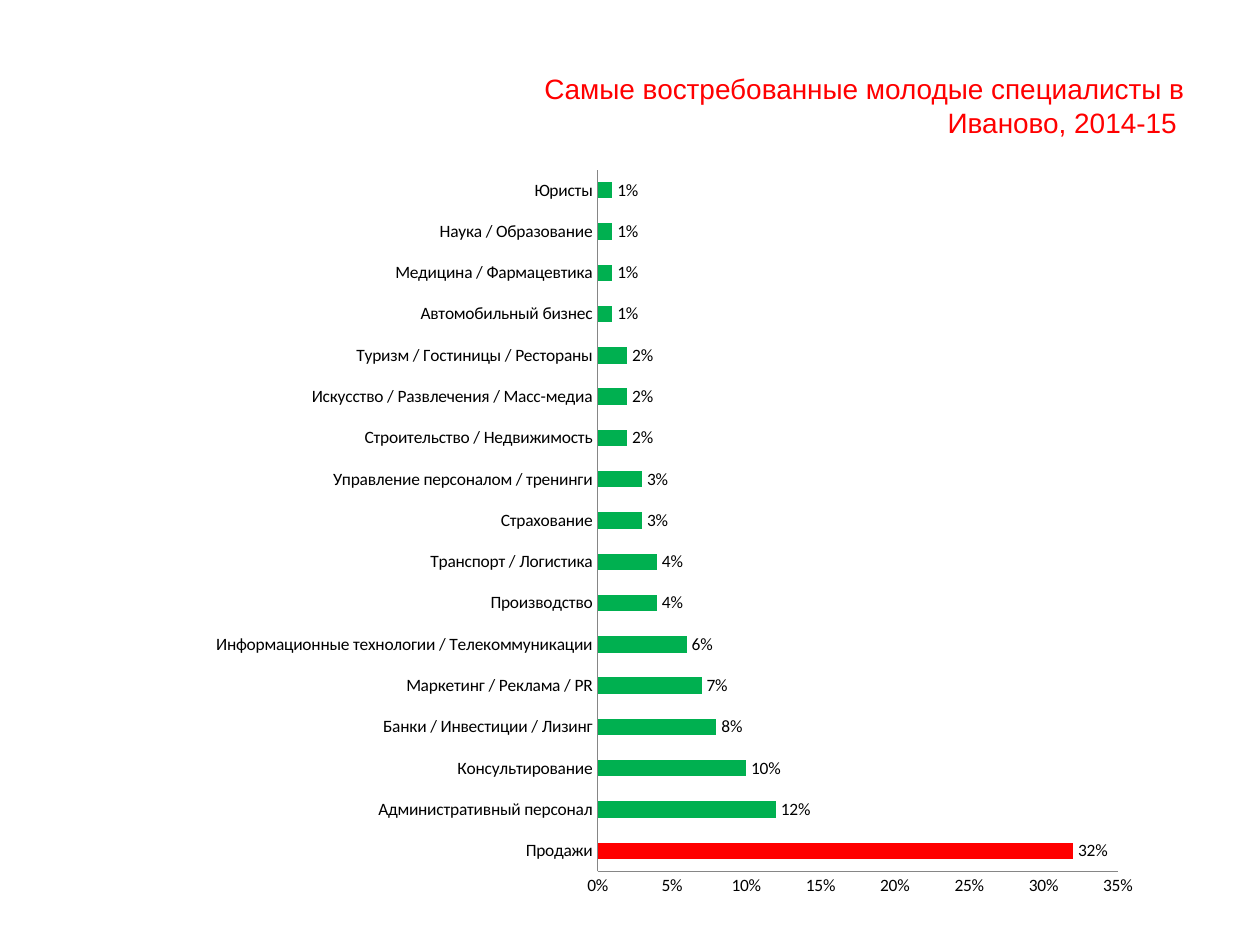
"""Build a slide charting the most wanted young specialists in Ivanovo."""
from typing import NamedTuple

from lxml import etree
from pptx import Presentation
from pptx.chart.data import CategoryChartData
from pptx.dml.color import RGBColor
from pptx.enum import chart as charts, text
from pptx.oxml import ns
from pptx.util import Inches, Pt

GREEN, RED, BLACK, GREY = "00B050", "FF0000", "000000", "868686"
PERCENT = "0%"


class Frame(NamedTuple):
    left: float
    top: float
    width: float
    height: float


class Field(NamedTuple):
    name: str
    share: float


FIELDS = [
    Field("Продажи", 0.32),
    Field("Административный персонал", 0.12),
    Field("Консультирование", 0.10),
    Field("Банки / Инвестиции / Лизинг", 0.08),
    Field("Маркетинг / Реклама / PR", 0.07),
    Field("Информационные технологии / Телекоммуникации", 0.06),
    Field("Производство", 0.04),
    Field("Транспорт / Логистика", 0.04),
    Field("Страхование", 0.03),
    Field("Управление персоналом / тренинги", 0.03),
    Field("Строительство / Недвижимость", 0.02),
    Field("Искусство / Развлечения / Масс-медиа", 0.02),
    Field("Туризм / Гостиницы / Рестораны", 0.02),
    Field("Автомобильный бизнес", 0.01),
    Field("Медицина / Фармацевтика", 0.01),
    Field("Наука / Образование", 0.01),
    Field("Юристы", 0.01),
]


def paint(fill, colour: str) -> None:
    fill.solid()
    fill.fore_color.rgb = RGBColor.from_string(colour)


def style_font(font, name: str, size: float, colour: str) -> None:
    font.name, font.size = name, Pt(size)
    paint(font.fill, colour)


def add_title(page, frame: Frame, words: str) -> None:
    box = page.shapes.add_textbox(*map(Inches, frame))
    box.text_frame.word_wrap = True
    para = box.text_frame.paragraphs[0]
    para.alignment = text.PP_ALIGN.RIGHT
    span = para.add_run()
    span.text = words
    style_font(span.font, "Arial", 16, RED)


def style_axis(axis) -> None:
    axis.has_major_gridlines = False
    axis.major_tick_mark = axis.minor_tick_mark = charts.XL_TICK_MARK.NONE
    axis.format.line.width = Pt(0.75)
    paint(axis.format.line.fill, GREY)


def place_plot(chart, area: Frame) -> None:
    plot_area = chart.plots[0]._element.getparent()
    for old in plot_area.findall(ns.qn("c:layout")):
        plot_area.remove(old)
    layout = etree.Element(ns.qn("c:layout"))
    manual = etree.SubElement(layout, ns.qn("c:manualLayout"))
    settings = dict(layoutTarget="inner", xMode="edge", yMode="edge",
                    x=area.left, y=area.top, w=area.width, h=area.height)
    for tag, value in settings.items():
        etree.SubElement(manual, ns.qn(f"c:{tag}")).set("val", str(value))
    plot_area.insert(0, layout)


def add_bars(page, frame: Frame, fields: list[Field]) -> None:
    data = CategoryChartData(number_format=PERCENT)
    data.categories = [field.name for field in fields]
    data.add_series("Series 1", [field.share for field in fields])
    chart = page.shapes.add_chart(
        charts.XL_CHART_TYPE.BAR_CLUSTERED, *map(Inches, frame), data).chart
    chart.has_legend = chart.has_title = False
    style_font(chart.font, "Calibri", 10, BLACK)
    place_plot(chart, Frame(0.44, 0.03, 0.55, 0.95))

    style_axis(chart.category_axis)
    shares = chart.value_axis
    style_axis(shares)
    shares.minimum_scale, shares.maximum_scale, shares.major_unit = 0, 0.35, 0.05
    shares.tick_labels.number_format = PERCENT
    shares.tick_labels.number_format_is_linked = False

    plot = chart.plots[0]
    plot.vary_by_categories = False
    plot.gap_width = 150
    bars = plot.series[0]
    paint(bars.format.fill, GREEN)
    paint(bars.points[0].format.fill, RED)
    labels = bars.data_labels
    labels.show_value = True
    labels.number_format, labels.number_format_is_linked = PERCENT, False
    labels.position = charts.XL_LABEL_POSITION.OUTSIDE_END


def main() -> None:
    deck = Presentation()
    deck.slide_width, deck.slide_height = Inches(10), Inches(7.5)
    page = deck.slides.add_slide(deck.slide_layouts[6])
    add_title(page, Frame(3.33, 0.52, 6.17, 0.63),
              "Самые востребованные молодые специалисты в Иваново, 2014-15 ")
    add_bars(page, Frame(1.44, 1.17, 7.55, 5.94), FIELDS)
    deck.save("out.pptx")


if __name__ == "__main__":
    main()
